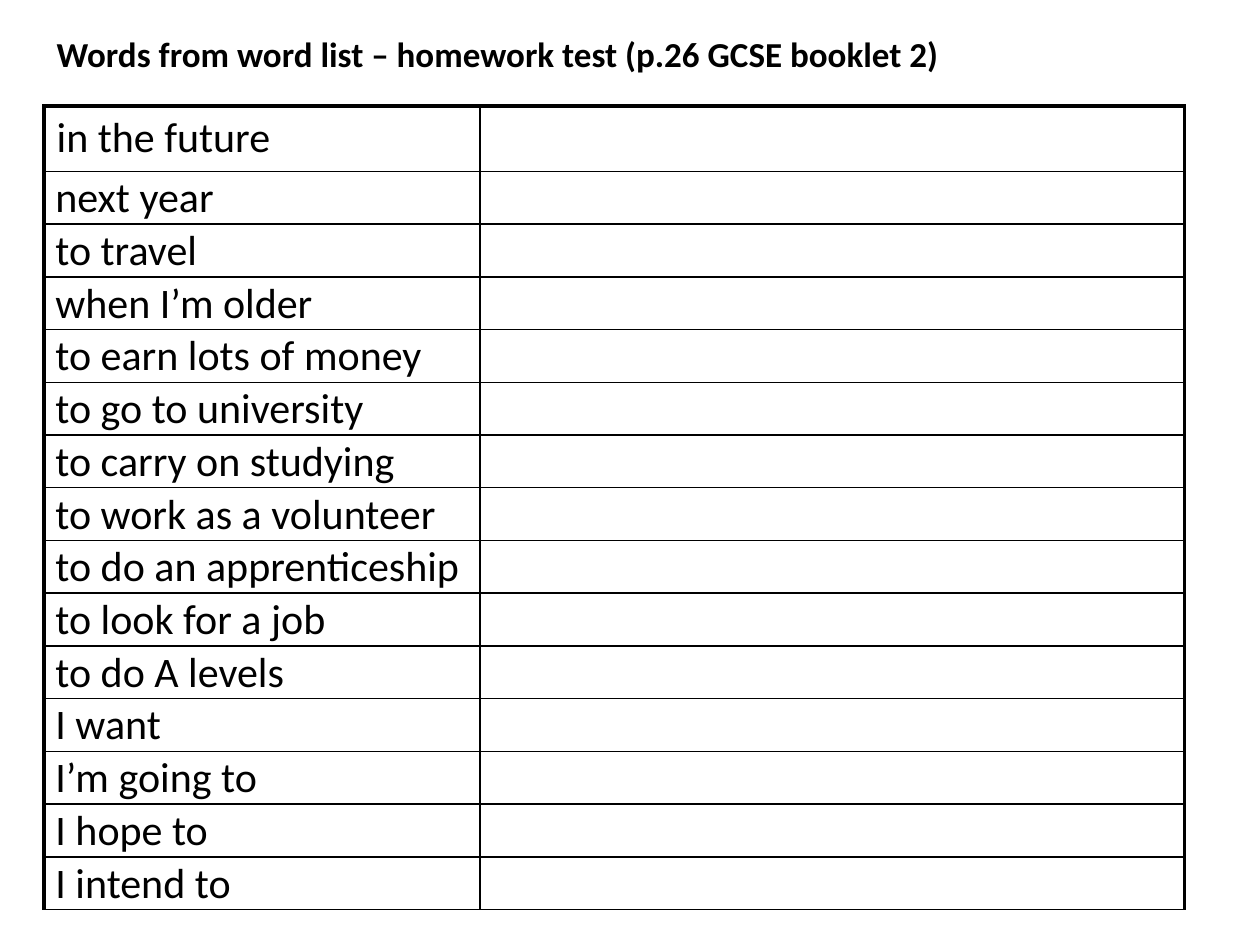
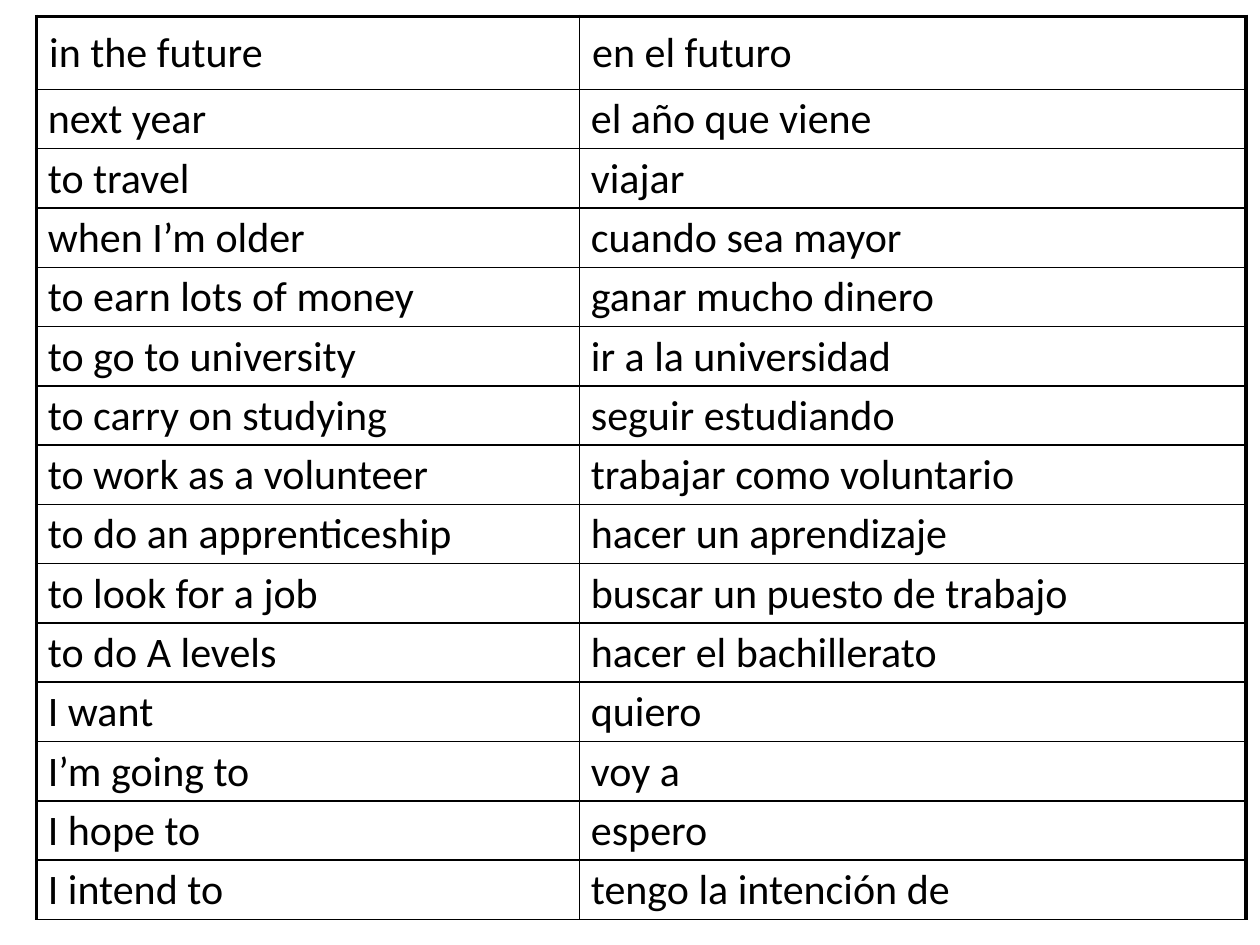
from lxml.etree import SubElement
from pptx import Presentation
from pptx.dml.color import RGBColor
from pptx.enum.text import MSO_ANCHOR, MSO_AUTO_SIZE, PP_ALIGN
from pptx.oxml.ns import qn
from pptx.util import Inches, Pt

TITLE = "Words from word list – homework test (p.26 GCSE booklet 2)"
VOCABULARY = [
    ("in the future", "en el futuro"),
    ("next year", "el año que viene"),
    ("to travel", "viajar"),
    ("when I’m older", "cuando sea mayor"),
    ("to earn lots of money", "ganar mucho dinero"),
    ("to go to university", "ir a la universidad"),
    ("to carry on studying", "seguir estudiando"),
    ("to work as a volunteer", "trabajar como voluntario"),
    ("to do an apprenticeship", "hacer un aprendizaje"),
    ("to look for a job", "buscar un puesto de trabajo"),
    ("to do A levels", "hacer el bachillerato"),
    ("I want", "quiero"),
    ("I’m going to", "voy a"),
    ("I hope to", "espero"),
    ("I intend to", "tengo la intención de"),
]

# Boxes are left, top, width, height in inches.
TITLE_BOX = (0.35, 0.21, 9.21, 0.44)
TEST = dict(box=(0.35, 0.84, 9.05, 6.38), prompt_width=3.46, first_row=0.52)
ANSWERS = dict(box=(0.29, 0.13, 9.6, 7.17), prompt_width=4.31, first_row=0.58)

THEME = dict(
    ink="000000",
    title=dict(name="Calibri", size=Pt(20), bold=True),
    body=dict(name="Calibri", size=Pt(24), bold=False),
    frame=Pt(2.25),
    rule=Pt(1),
    first_margins=dict(margin_left=0.1, margin_right=0.1, margin_top=0.05, margin_bottom=0.05),
    margins=dict(margin_left=0.09, margin_right=0.01, margin_top=0.01, margin_bottom=0),
)


def write(p, text, style):
    r = p.add_run()
    r.text = text
    for name, value in THEME[style].items():
        setattr(r.font, name, value)
    r.font.color.rgb = RGBColor.from_string(THEME["ink"])


def draw_borders(cell, row, col):
    """Heavy frame on the left, top and right; thin rules elsewhere."""
    heavy = {"lnL": col == 0, "lnR": col == 1, "lnT": row == 0, "lnB": False}
    tc_pr = cell._tc.get_or_add_tcPr()
    for side, is_frame in heavy.items():
        width = THEME["frame" if is_frame else "rule"]
        ln = SubElement(tc_pr, qn(f"a:{side}"), w=str(int(width)))
        fill = SubElement(ln, qn("a:solidFill"))
        SubElement(fill, qn("a:srgbClr"), val=THEME["ink"])


def add_word_table(slide, rows, box, prompt_width, first_row):
    width, height = box[2:]
    table = slide.shapes.add_table(len(rows), 2, *map(Inches, box)).table
    table.first_row = table.horz_banding = False
    for column, size in zip(table.columns, (prompt_width, width - prompt_width)):
        column.width = Inches(size)
    row_height = (height - first_row) / (len(rows) - 1)
    for i, words in enumerate(rows):
        table.rows[i].height = Inches(row_height if i else first_row)
        for j, word in enumerate(words):
            cell = table.cell(i, j)
            draw_borders(cell, i, j)
            cell.fill.background()
            cell.vertical_anchor = MSO_ANCHOR.MIDDLE
            for name, value in THEME["margins" if i else "first_margins"].items():
                setattr(cell, name, Inches(value))
            if word:
                write(cell.text_frame.paragraphs[0], word, "body")


def place_title(slide, text):
    sp = slide.shapes.title
    for name, value in zip(("left", "top", "width", "height"), TITLE_BOX):
        setattr(sp, name, Inches(value))
    tf = sp.text_frame
    layout = dict(word_wrap=True, auto_size=MSO_AUTO_SIZE.NONE, vertical_anchor=MSO_ANCHOR.TOP)
    for name, value in layout.items():
        setattr(tf, name, value)
    tf.paragraphs[0].alignment = PP_ALIGN.LEFT
    write(tf.paragraphs[0], text, "title")


def main():
    prs = Presentation()
    prs.slide_width, prs.slide_height = Inches(10), Inches(7.5)
    title_only, blank = prs.slide_layouts[5], prs.slide_layouts[6]

    test = prs.slides.add_slide(title_only)
    place_title(test, TITLE)
    add_word_table(test, [(english, "") for english, _ in VOCABULARY], **TEST)

    answers = prs.slides.add_slide(blank)
    add_word_table(answers, VOCABULARY, **ANSWERS)
    prs.save("out.pptx")


if __name__ == "__main__":
    main()
